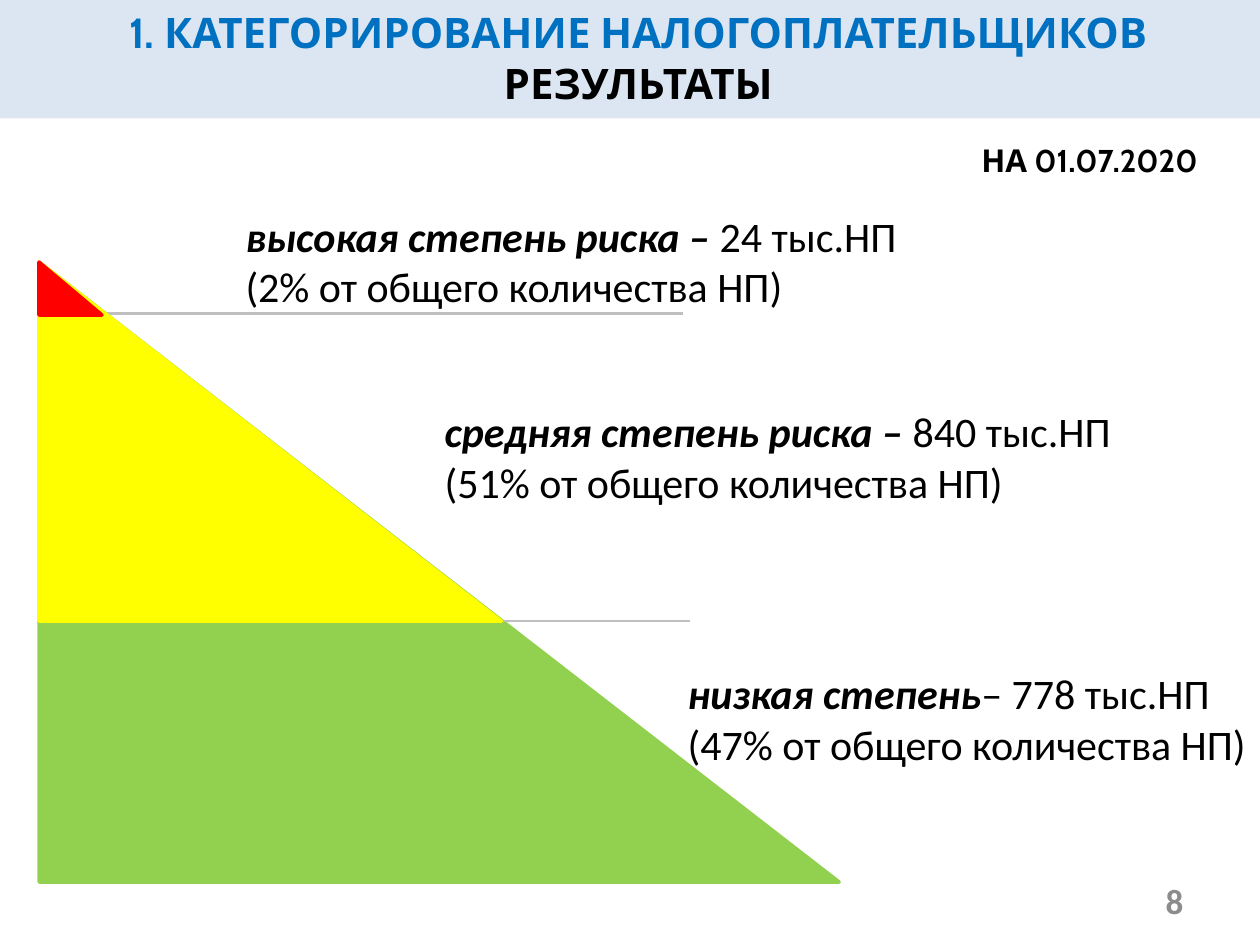
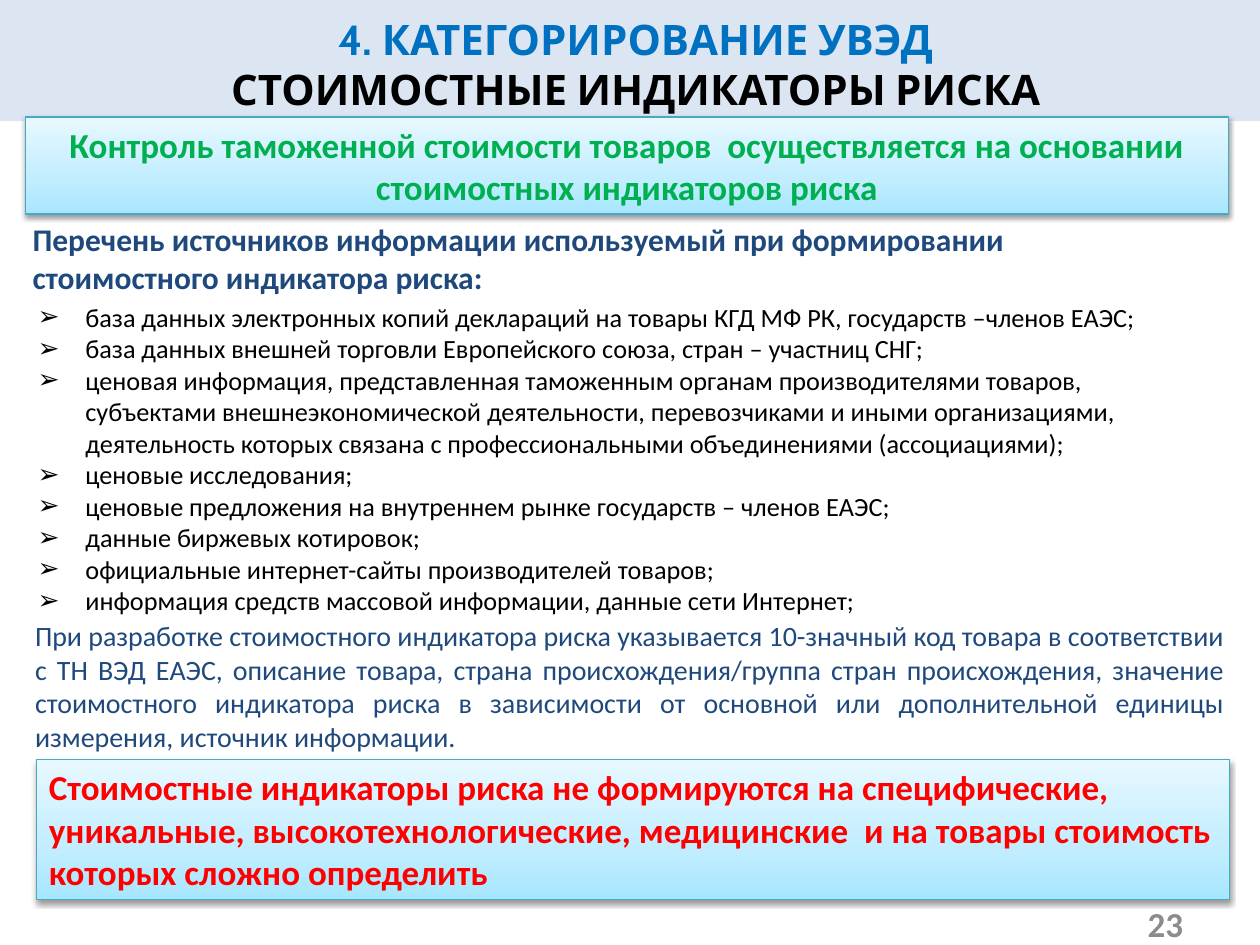
from dataclasses import dataclass

import pptx
import pptx.dml.color
import pptx.enum.shapes
import pptx.enum.text
import pptx.oxml
import pptx.oxml.ns
import pptx.slide
import pptx.shapes.autoshape
import pptx.text.text
import pptx.util
from pptx.util import Inches

Align = pptx.enum.text.PP_ALIGN
Anchor = pptx.enum.text.MSO_ANCHOR
ShapeKind = pptx.enum.shapes.MSO_SHAPE

BLACK = "000000"
BLUE = "0070C0"
NAVY = "1F497D"
GREEN = "00B050"
RED = "FF0000"
GRAY = "8C8C8C"
RULE_GRAY = "BFBFBF"
BAND_FILL = "DCE6F2"
PANEL_LINE = "46AAC5"
PANEL_STOPS = ((0, "A7E6FF"), (35, "C1EDFF"), (100, "E7F8FF"))
BODY_FONT = "Calibri"
TITLE_FONT = "Cabin"
BULLET_INDENT = Inches(0.38)
PYRAMID_LEFT, PYRAMID_TOP = 0.31, 2.08


@dataclass(frozen=True)
class Box:
    left: float
    top: float
    width: float
    height: float

    def lengths(self) -> tuple:
        return tuple(Inches(n) for n in (self.left, self.top, self.width, self.height))


@dataclass(frozen=True)
class TextRun:
    text: str
    size: float
    color: str = BLACK
    bold: bool = False
    italic: bool = False
    font: str = BODY_FONT


@dataclass(frozen=True)
class RiskTier:
    width: float
    height: float
    color: str
    label: str
    amount: str
    share: str
    label_box: Box


@dataclass(frozen=True)
class Panel:
    box: Box
    text: str
    color: str
    align: Align


RISK_TIERS = (
    RiskTier(6.35, 4.92, "92D050", "низкая степень", "– 778 тыс.НП",
             "(47% от общего количества НП)", Box(5.36, 5.25, 4.64, 0.91)),
    RiskTier(3.67, 2.85, "FFFF00", "средняя степень риска – ", "840 тыс.НП",
             "(51% от общего количества НП)", Box(3.43, 3.17, 5.75, 0.91)),
    RiskTier(0.5, 0.42, RED, "высокая степень риска – ", "24 тыс.НП",
             "(2% от общего количества НП)", Box(1.85, 1.62, 6.22, 0.91)),
)

PANELS = (
    Panel(Box(0.2, 0.93, 9.55, 0.77),
          "Контроль таможенной стоимости товаров  осуществляется на основании "
          "стоимостных индикаторов риска", GREEN, Align.CENTER),
    Panel(Box(0.29, 6.03, 9.47, 1.11),
          "Стоимостные индикаторы риска не формируются на специфические, уникальные, "
          "высокотехнологические, медицинские  и на товары стоимость которых сложно "
          "определить", RED, Align.LEFT),
)

SOURCES = (
    "база данных электронных копий деклараций на товары КГД МФ РК, государств –членов ЕАЭС;",
    "база данных внешней торговли Европейского союза, стран – участниц СНГ;",
    "ценовая информация, представленная таможенным органам производителями товаров, "
    "субъектами внешнеэкономической деятельности, перевозчиками и иными организациями, "
    "деятельность которых связана с профессиональными объединениями (ассоциациями);",
    "ценовые исследования;",
    "ценовые предложения на внутреннем рынке государств – членов ЕАЭС;",
    "данные биржевых котировок;",
    "официальные интернет-сайты производителей товаров;",
    "информация средств массовой информации, данные сети Интернет;",
)
SOURCES_HEADING = ("Перечень источников информации используемый при формировании "
                   "стоимостного индикатора риска:")
INDICATOR_NOTE = (
    "При разработке стоимостного индикатора риска указывается 10-значный код товара в "
    "соответствии с ТН ВЭД ЕАЭС, описание товара, страна происхождения/группа стран "
    "происхождения, значение стоимостного индикатора риска в зависимости от основной или "
    "дополнительной единицы измерения, источник информации."
)


def rgb(color: str) -> pptx.dml.color.RGBColor:
    return pptx.dml.color.RGBColor.from_string(color)


def xml_element(tag: str, attributes: str = "", content: str = ""):
    namespace = pptx.oxml.ns.nsdecls("a")
    return pptx.oxml.parse_xml(f"<a:{tag} {namespace} {attributes}>{content}</a:{tag}>")


def write_text(frame: pptx.text.text.TextFrame, lines: list[list[TextRun]],
               align: Align = Align.LEFT, anchor: Anchor = Anchor.TOP, wrap: bool = True) -> None:
    """Write one paragraph for each list of runs."""
    frame.word_wrap = wrap
    frame.vertical_anchor = anchor
    for index, runs in enumerate(lines):
        paragraph = frame.add_paragraph() if index else frame.paragraphs[0]
        paragraph.alignment = align
        for text_run in runs:
            run = paragraph.add_run()
            run.text = text_run.text
            run.font.name = text_run.font
            run.font.size = pptx.util.Pt(text_run.size)
            run.font.bold = text_run.bold
            run.font.italic = text_run.italic
            run.font.color.rgb = rgb(text_run.color)


def add_text(slide: pptx.slide.Slide, box: Box, lines: list[list[TextRun]],
             align: Align = Align.LEFT, anchor: Anchor = Anchor.TOP,
             wrap: bool = True) -> pptx.text.text.TextFrame:
    frame = slide.shapes.add_textbox(*box.lengths()).text_frame
    write_text(frame, lines, align, anchor, wrap)
    return frame


def add_filled_shape(slide: pptx.slide.Slide, kind: ShapeKind, box: Box, fill: str,
                     line_width: float = 0) -> pptx.shapes.autoshape.Shape:
    shape = slide.shapes.add_shape(kind, *box.lengths())
    shape.shadow.inherit = False
    shape.fill.solid()
    shape.fill.fore_color.rgb = rgb(fill)
    if line_width:
        shape.line.color.rgb = rgb(fill)
        shape.line.width = pptx.util.Pt(line_width)
    else:
        shape.line.fill.background()
    return shape


def add_header(slide: pptx.slide.Slide, band_height: float, title_box: Box,
               section: str, topic: str) -> None:
    add_filled_shape(slide, ShapeKind.RECTANGLE, Box(0, 0, 10, band_height), BAND_FILL)
    lines = [[TextRun(section, 24, BLUE, True, font=TITLE_FONT)],
             [TextRun(topic, 24, BLACK, True, font=TITLE_FONT)]]
    add_text(slide, title_box, lines, Align.CENTER, Anchor.MIDDLE)


def add_slide_number(slide: pptx.slide.Slide, number: int, top: float) -> None:
    add_text(slide, Box(7.16, top, 2.33, 0.4), [[TextRun(str(number), 20, GRAY, True)]],
             Align.RIGHT, Anchor.MIDDLE)


def add_rule(slide: pptx.slide.Slide, right: float, y: float) -> None:
    connector = slide.shapes.add_connector(
        pptx.enum.shapes.MSO_CONNECTOR.STRAIGHT,
        Inches(PYRAMID_LEFT), Inches(y), Inches(right), Inches(y))
    connector.line.color.rgb = rgb(RULE_GRAY)
    connector.line.width = pptx.util.Pt(1.5)
    connector._element.spPr.append(xml_element("effectLst"))


def add_tier(slide: pptx.slide.Slide, tier: RiskTier) -> None:
    box = Box(PYRAMID_LEFT, PYRAMID_TOP, tier.width, tier.height)
    add_filled_shape(slide, ShapeKind.RIGHT_TRIANGLE, box, tier.color, line_width=2)


def add_panel(slide: pptx.slide.Slide, panel: Panel) -> None:
    """Draw a gradient box with a soft shadow below it."""
    shape = add_filled_shape(slide, ShapeKind.RECTANGLE, panel.box, PANEL_STOPS[0][1])
    shape.line.color.rgb = rgb(PANEL_LINE)
    shape.line.width = pptx.util.Pt(0.75)
    properties = shape._element.spPr
    stops = "".join(f'<a:gs pos="{position * 1000}"><a:srgbClr val="{color}"/></a:gs>'
                    for position, color in PANEL_STOPS)
    gradient = xml_element("gradFill", 'rotWithShape="1"',
                           f'<a:gsLst>{stops}</a:gsLst><a:lin ang="16200000" scaled="1"/>')
    properties.replace(properties.find(pptx.oxml.ns.qn("a:solidFill")), gradient)
    blur, distance = pptx.util.Pt(3.1), pptx.util.Pt(1.6)
    shadow = xml_element(
        "outerShdw", f'blurRad="{blur}" dist="{distance}" dir="5400000" rotWithShape="0"',
        f'<a:srgbClr val="{BLACK}"><a:alpha val="38000"/></a:srgbClr>')
    properties.find(pptx.oxml.ns.qn("a:effectLst")).append(shadow)
    write_text(shape.text_frame, [[TextRun(panel.text, 20, panel.color, True)]], panel.align)


def add_bullets(frame: pptx.text.text.TextFrame) -> None:
    for paragraph in frame.paragraphs:
        properties = paragraph._p.get_or_add_pPr()
        properties.set("marL", str(BULLET_INDENT))
        properties.set("indent", str(-BULLET_INDENT))
        properties.append(xml_element("buFont", 'typeface="Arial"'))
        properties.append(xml_element("buChar", 'char="➢"'))


def build_risk_pyramid(slide: pptx.slide.Slide) -> None:
    low, medium, high = RISK_TIERS
    add_tier(slide, low)
    add_header(slide, 0.94, Box(0.72, -0.02, 8.69, 0.95),
               "1. КАТЕГОРИРОВАНИЕ НАЛОГОПЛАТЕЛЬЩИКОВ", "РЕЗУЛЬТАТЫ")
    add_rule(slide, 5.48, PYRAMID_TOP + medium.height)
    add_rule(slide, 5.42, PYRAMID_TOP + high.height - 0.01)
    add_tier(slide, medium)
    add_tier(slide, high)
    for tier in RISK_TIERS:
        label = TextRun(tier.label, 24, bold=True, italic=True)
        add_text(slide, tier.label_box,
                 [[label, TextRun(tier.amount, 24)], [TextRun(tier.share, 24)]])
    add_slide_number(slide, 8, 6.95)
    add_text(slide, Box(7.69, 1.07, 2.09, 0.4),
             [[TextRun("НА 01.07.2020", 18, bold=True, font=TITLE_FONT)]], wrap=False)


def build_value_indicators(slide: pptx.slide.Slide) -> None:
    add_header(slide, 0.96, Box(0.2, 0.05, 9.69, 0.91),
               "4. КАТЕГОРИРОВАНИЕ УВЭД", "СТОИМОСТНЫЕ ИНДИКАТОРЫ РИСКА")
    add_slide_number(slide, 23, 7.13)
    for panel in PANELS:
        add_panel(slide, panel)
    add_bullets(add_text(slide, Box(0.2, 2.34, 9.14, 2.63),
                         [[TextRun(source, 15)] for source in SOURCES]))
    add_text(slide, Box(0.16, 1.7, 9.41, 0.71), [[TextRun(SOURCES_HEADING, 18, NAVY, True)]])
    add_text(slide, Box(0.18, 4.86, 9.64, 1.18), [[TextRun(INDICATOR_NOTE, 16, NAVY)]],
             Align.JUSTIFY)


def main() -> None:
    presentation = pptx.Presentation()
    presentation.slide_width = Inches(10)
    presentation.slide_height = Inches(7.5)
    blank_layout = presentation.slide_layouts[6]
    for build in (build_risk_pyramid, build_value_indicators):
        build(presentation.slides.add_slide(blank_layout))
    presentation.save("out.pptx")


if __name__ == "__main__":
    main()
